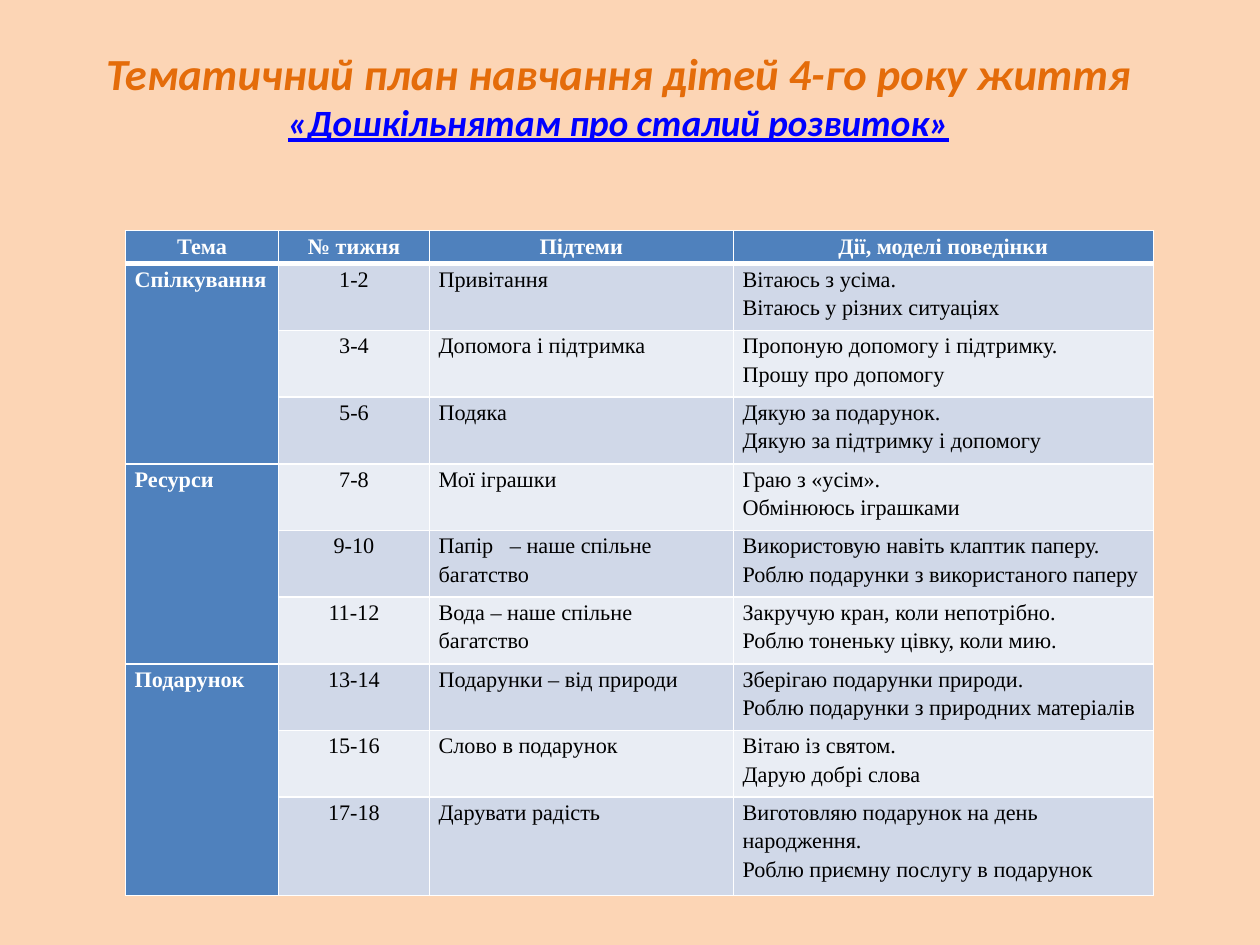
from lxml import etree
from pptx import Presentation
from pptx.dml.color import RGBColor
from pptx.enum.text import MSO_ANCHOR, PP_ALIGN
from pptx.oxml.ns import qn
from pptx.util import Inches, Pt

CENTER, LEFT = PP_ALIGN.CENTER, PP_ALIGN.LEFT
MIDDLE, TOP = MSO_ANCHOR.MIDDLE, MSO_ANCHOR.TOP

# Content
TITLE_LINES = [
    # text, size, colour, underlined
    ("Тематичний план навчання дітей 4-го року життя", 24, "E46C0A", False),
    ("«Дошкільнятам про сталий розвиток»", 20, "0000FF", True),
]
HEADERS = ["Тема", "№ тижня", "Підтеми", "Дії, моделі поведінки"]
THEMES = {
    "Спілкування": [
        ("1-2", "Привітання", "Вітаюсь з усіма.\nВітаюсь у різних ситуаціях"),
        ("3-4", "Допомога і підтримка",
         "Пропоную допомогу і підтримку.\nПрошу про допомогу"),
        ("5-6", "Подяка", "Дякую за подарунок.\nДякую за підтримку і допомогу"),
    ],
    "Ресурси": [
        ("7-8", "Мої іграшки", "Граю з «усім».\nОбмінююсь іграшками"),
        ("9-10", "Папір   – наше спільне багатство",
         "Використовую навіть клаптик паперу.\nРоблю подарунки з використаного паперу"),
        ("11-12", "Вода – наше спільне багатство",
         "Закручую кран, коли непотрібно.\nРоблю тоненьку цівку, коли мию."),
    ],
    "Подарунок": [
        ("13-14", "Подарунки – від природи",
         "Зберігаю подарунки природи.\nРоблю подарунки з природних матеріалів"),
        ("15-16", "Слово в подарунок", "Вітаю із святом.\nДарую добрі слова"),
        ("17-18", "Дарувати радість",
         "Виготовляю подарунок на день народження.\nРоблю приємну послугу в подарунок"),
    ],
}
BACKGROUND, ACCENT, WHITE, BLACK = "FCD5B5", "4F81BD", "FFFFFF", "000000"
BANDS = ["D0D8E8", "E9EDF4"]

# Table measures
COLUMN_WIDTHS = [1.15, 1.13, 2.28, 3.15]
ROW_HEIGHTS = [0.25] + [0.5] * 8 + [0.74]


def paint(target, colour):
    target.solid()
    target.fore_color.rgb = RGBColor.from_string(colour)


def style_font(font, name, size, colour, bold):
    font.name, font.size, font.bold = name, Pt(size), bold
    font.color.rgb = RGBColor.from_string(colour)


def set_borders(cell, top, bottom):
    properties = cell._tc.get_or_add_tcPr()
    for side, width in (("L", 1), ("R", 1), ("T", top), ("B", bottom)):
        line = etree.SubElement(properties, qn(f"a:ln{side}"), w=str(Pt(width)))
        fill = etree.SubElement(line, qn("a:solidFill"))
        etree.SubElement(fill, qn("a:srgbClr"), val=WHITE)


def style_cell(cell, row, column):
    is_accent = row == 0 or column == 0
    set_borders(cell, 3 if row == 1 else 1, 3 if row == 0 else 1)
    paint(cell.fill, ACCENT if is_accent else BANDS[(row - 1) % 2])
    cell.margin_left = cell.margin_right = Inches(0.07)
    cell.margin_top = cell.margin_bottom = 0
    cell.vertical_anchor = TOP
    for paragraph in cell.text_frame.paragraphs:
        paragraph.alignment = CENTER if row == 0 or column == 1 else LEFT
        paragraph.line_spacing = 1.15
        style_font(paragraph.font, "Times New Roman", 12, BLACK, False)
        for run in paragraph.runs:
            style_font(run.font, "Times New Roman", 12,
                       WHITE if is_accent else BLACK, is_accent)


def add_title(slide):
    box = slide.shapes.add_textbox(Inches(0.31), Inches(0.16), Inches(8.66), Inches(1.1))
    frame = box.text_frame
    frame.word_wrap = True
    frame.vertical_anchor = MIDDLE
    frame.text = "\n".join(line[0] for line in TITLE_LINES)
    for paragraph, (_, size, colour, underlined) in zip(frame.paragraphs, TITLE_LINES):
        paragraph.alignment = CENTER
        font = paragraph.runs[0].font
        style_font(font, "Calibri", size, colour, True)
        font.italic, font.underline = True, underlined


def add_plan(slide):
    # One list of rows, with each theme named on the first row of its group
    rows = [HEADERS]
    for theme, weeks in THEMES.items():
        rows += [("" if index else theme, *week) for index, week in enumerate(weeks)]

    table = slide.shapes.add_table(
        len(rows), len(HEADERS), Inches(0.94), Inches(1.73),
        Inches(sum(COLUMN_WIDTHS)), Inches(sum(ROW_HEIGHTS))).table
    for column, width in zip(table.columns, COLUMN_WIDTHS):
        column.width = Inches(width)
    for row, height in zip(table.rows, ROW_HEIGHTS):
        row.height = Inches(height)

    for row, texts in enumerate(rows):
        for column, text in enumerate(texts):
            cell = table.cell(row, column)
            cell.text_frame.text = text
            style_cell(cell, row, column)

    # Theme cells span their weeks
    first = 1
    for weeks in THEMES.values():
        last = first + len(weeks) - 1
        table.cell(first, 0).merge(table.cell(last, 0))
        first = last + 1


def main():
    presentation = Presentation()
    presentation.slide_width, presentation.slide_height = Inches(9.45), Inches(7.09)
    slide = presentation.slides.add_slide(presentation.slide_layouts[6])
    paint(slide.background.fill, BACKGROUND)
    add_title(slide)
    add_plan(slide)
    presentation.save("out.pptx")


if __name__ == "__main__":
    main()
